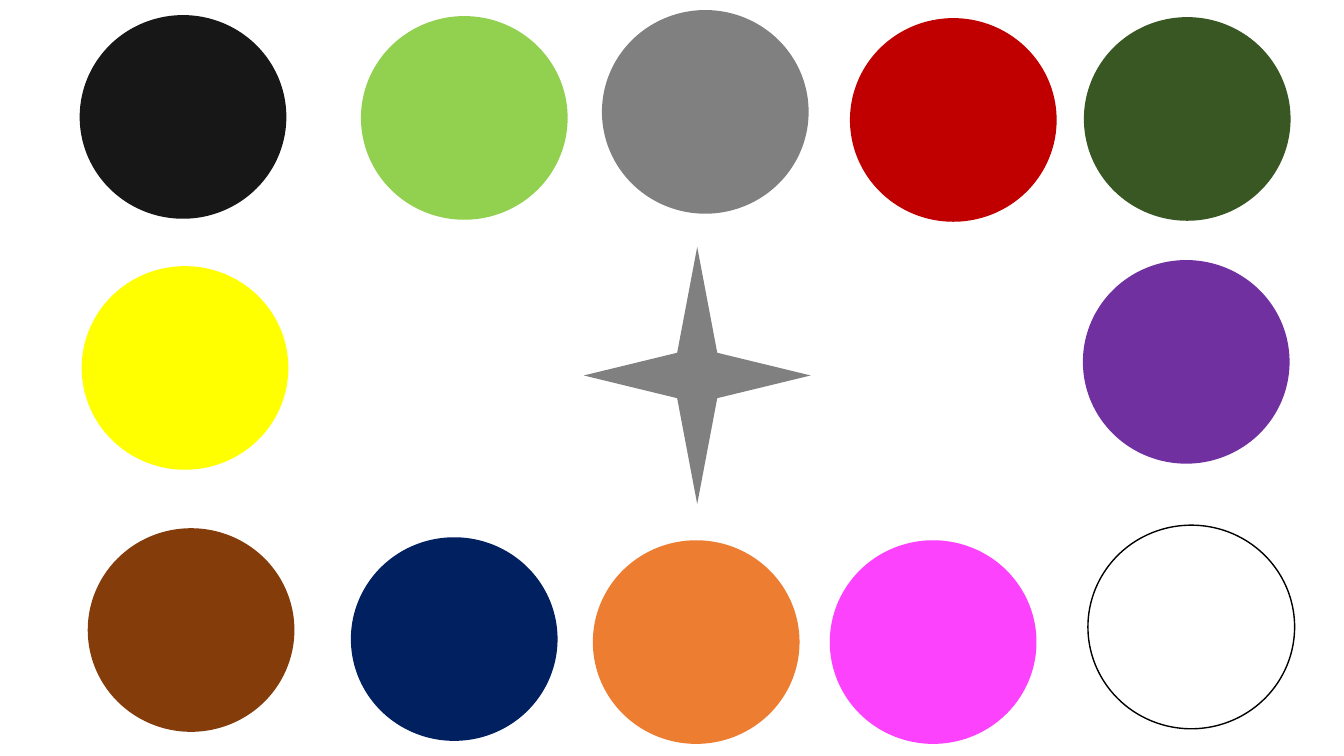
from pptx import Presentation
from pptx.dml.color import RGBColor
from pptx.enum.shapes import MSO_SHAPE
from pptx.util import Inches, Pt

DISC_WIDTH, DISC_HEIGHT = 2.05, 2.02

# left, top, fill
DISCS = [
    # top row
    (0.79, 0.15, "181717"),
    (3.58, 0.16, "92D050"),
    (5.97, 0.10, "808080"),
    (8.43, 0.18, "C00000"),
    (10.75, 0.17, "385723"),
    # middle row
    (0.81, 2.64, "FFFF00"),
    (10.74, 2.58, "7030A0"),
    # bottom row
    (0.87, 5.24, "843C0B"),
    (3.48, 5.33, "002060"),
    (5.88, 5.36, "ED7D31"),
    (8.23, 5.36, "FC42FC"),
]


def color(hex_string):
    return RGBColor.from_string(hex_string)


class ColorSlide:
    """Holds the slide and the style shared by its shapes."""

    line_width = Pt(1)

    def __init__(self, prs):
        self.s = prs.slides.add_slide(prs.slide_layouts[6])
        bg = self.s.background.fill
        bg.solid()
        bg.fore_color.rgb = color("FFFFFF")

    def shape(self, kind, left, top, width, height, fill, line=None):
        sp = self.s.shapes.add_shape(
            kind, Inches(left), Inches(top), Inches(width), Inches(height))
        sp.shadow.inherit = False
        sp.fill.solid()
        sp.fill.fore_color.rgb = color(fill)
        if line:
            sp.line.color.rgb = color(line)
            sp.line.width = self.line_width
        else:
            sp.line.fill.background()
        return sp

    def disc(self, left, top, fill, line=None):
        return self.shape(MSO_SHAPE.OVAL, left, top,
                          DISC_WIDTH, DISC_HEIGHT, fill, line)

    def star(self, left, top, width, height, fill):
        return self.shape(MSO_SHAPE.STAR_4_POINT, left, top,
                          width, height, fill)


def main():
    prs = Presentation()
    prs.slide_width, prs.slide_height = Inches(13.33), Inches(7.5)
    slide = ColorSlide(prs)
    for left, top, fill in DISCS:
        slide.disc(left, top, fill)
    slide.disc(10.79, 5.21, "FFFFFF", line="000000")
    slide.star(5.79, 2.45, 2.25, 2.55, "808080")
    prs.save("out.pptx")


if __name__ == "__main__":
    main()
